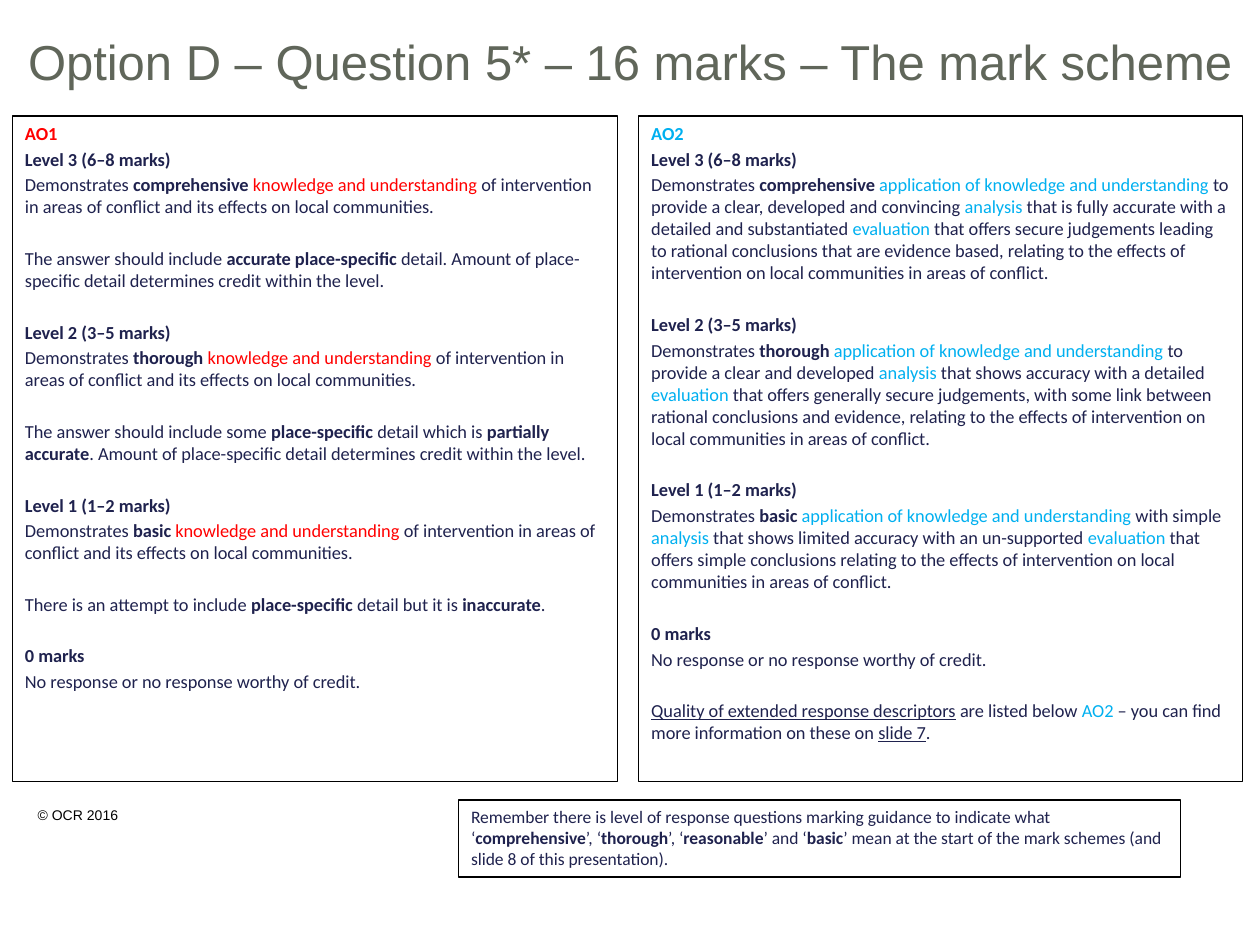
from pptx import Presentation
from pptx.dml.color import RGBColor
from pptx.enum.shapes import MSO_SHAPE
from pptx.enum.text import MSO_ANCHOR, PP_ALIGN
from pptx.util import Inches, Pt

RECT = MSO_SHAPE.RECTANGLE
TOP, MIDDLE = MSO_ANCHOR.TOP, MSO_ANCHOR.MIDDLE
LEFT, CENTER = PP_ALIGN.LEFT, PP_ALIGN.CENTER

NAVY, RED, BLUE = "1F224E", "FF0000", "00B0F0"
GREY, BLACK, WHITE = "60665A", "000000", "FFFFFF"
STEP, GAP = 2.1, 16.9  # points before a line, and before a new block


def color(code):
    return RGBColor.from_string(code)


def run(text, ink=NAVY, bold=False, line=False):
    return text, ink, bold, line


def strong(text, ink=NAVY):
    return run(text, ink, bold=True)


def under(text):
    return run(text, line=True)


class Deck:
    """Holds the fonts and the current slide."""

    def __init__(self):
        self.head, self.body = "Arial", "Calibri"
        self.prs = Presentation()
        self.prs.slide_width, self.prs.slide_height = Inches(10), Inches(7.5)
        self.slide = self.prs.slides.add_slide(self.prs.slide_layouts[6])

    def put_text(self, shape, paras, size, font, align=LEFT, anchor=TOP):
        """Fill a shape with paragraphs, each a pair of space before and runs."""
        frame = shape.text_frame
        frame.word_wrap = True
        frame.vertical_anchor = anchor
        for i, (space, runs) in enumerate(paras):
            para = frame.add_paragraph() if i else frame.paragraphs[0]
            para.alignment = align
            para.space_before = Pt(space if i else 0)
            for text, ink, bold, line in runs:
                part = para.add_run()
                part.text = text
                part.font.name, part.font.size = font, Pt(size)
                part.font.bold, part.font.underline = bold, line
                part.font.color.rgb = color(ink)

    def label(self, x, y, w, h, text, size, ink, **style):
        box = self.slide.shapes.add_textbox(*map(Inches, (x, y, w, h)))
        self.put_text(box, [(0, [run(text, ink)])], size, self.head, **style)

    def panel(self, x, y, w, h, paras, size):
        box = self.slide.shapes.add_shape(RECT, *map(Inches, (x, y, w, h)))
        box.shadow.inherit = False
        box.fill.solid()
        box.fill.fore_color.rgb = color(WHITE)
        box.line.color.rgb = color(BLACK)
        box.line.width = Pt(0.75)
        self.put_text(box, paras, size, self.body)


LEVELS = [
    ("Level 3 (6–8 marks)", "comprehensive "),
    ("Level 2 (3–5 marks)", "thorough "),
    ("Level 1 (1–2 marks)", "basic "),
]


def scheme(name, ink, skill, rest):
    """Paragraphs of one objective; rest holds the end of each level's text."""
    paras = [(0, [strong(name, ink)])]
    for i, ((title, grade), (tail, extra)) in enumerate(zip(LEVELS, rest)):
        paras.append((GAP if i else STEP, [strong(title)]))
        paras.append((STEP, [run("Demonstrates "), strong(grade), run(skill, ink), *tail]))
        if extra:
            paras.append((GAP, extra))
    paras.append((GAP, [strong("0 marks")]))
    paras.append((STEP, [run("No response or no response worthy of credit.")]))
    return paras


def judge(start, middle, end):
    """The end of a level's text on analysis and evaluation, with no extra."""
    return [run(start), run("analysis", BLUE), run(middle), run("evaluation", BLUE),
            run(end + " the effects of intervention on local communities in areas of conflict.")], []


EFFECT = [run("of intervention in areas of conflict and its effects on local communities.")]
AMOUNT = "Amount of place-specific detail determines credit within the level."

KNOW = [
    (EFFECT, [run("The answer should include "), strong("accurate place-specific"),
              run(" detail. " + AMOUNT)]),
    (EFFECT, [run("The answer should include some"), strong(" place-specific "),
              run("detail which is "), strong("partially accurate"), run(". " + AMOUNT)]),
    (EFFECT, [run("There is an attempt to include "), strong("place-specific"),
              run(" detail but it is "), strong("inaccurate"), run(".")]),
]
APPLY = [
    judge("to provide a clear, developed and convincing ",
          " that is fully accurate with a detailed and substantiated ",
          " that offers secure judgements leading to rational conclusions"
          " that are evidence based, relating to"),
    judge("to provide a clear and developed ",
          " that shows accuracy with a detailed ",
          " that offers generally secure judgements, with some link between"
          " rational conclusions and evidence, relating to"),
    judge("with simple ",
          " that shows limited accuracy with an un-supported ",
          " that offers simple conclusions relating to"),
]
QUALITY = [under("Quality of extended response descriptors"), run(" are listed below "),
           run("AO2", BLUE), run(" – you can find more information on these on "),
           under("slide 7"), run(".")]
REMIND = [
    run("Remember there is level of response questions marking guidance to indicate what ‘"),
    strong("comprehensive"), run("’, ‘"), strong("thorough"), run("’, ‘"),
    strong("reasonable"), run("’ and ‘"), strong("basic"),
    run("’ mean at the start of the mark schemes (and slide 8 of this presentation)."),
]


def main():
    deck = Deck()
    deck.label(0.2, 6.35, 1.89, 0.24, "© OCR 2016", 8, BLACK)
    deck.label(0, 0.19, 10, 0.59, "Option D – Question 5* – 16 marks – The mark scheme",
               28, GREY, align=CENTER, anchor=MIDDLE)
    know = scheme("AO1", RED, "knowledge and understanding ", KNOW)
    apply = scheme("AO2", BLUE, "application of knowledge and understanding ", APPLY)
    deck.panel(0.1, 0.92, 4.8, 5.28, know, 10.5)
    deck.panel(5.07, 0.92, 4.79, 5.28, apply + [(GAP, QUALITY)], 10.5)
    deck.panel(3.64, 6.35, 5.73, 0.61, [(0, REMIND)], 10)
    deck.prs.save("out.pptx")


if __name__ == "__main__":
    main()
